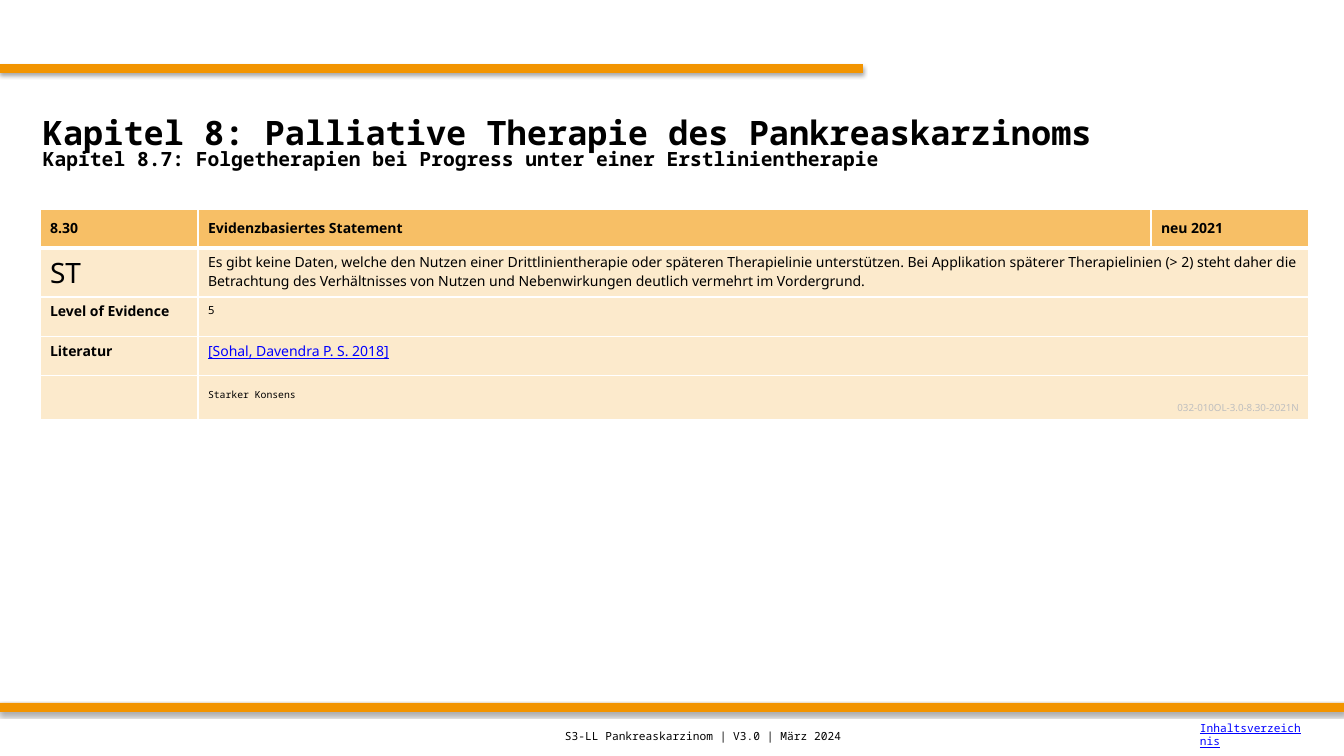
"""Build a guideline slide with a statement table on third-line therapy."""
import lxml.etree
import pptx
import pptx.dml.color
import pptx.enum.shapes
import pptx.enum.text
import pptx.oxml
import pptx.oxml.ns
import pptx.util

SCALE = 914400 / 100.8
SANS = "Noto Sans"
MONO = "Noto Sans Mono"
BLACK = "000000"
BLUE = "0000FF"
ORANGE = "F29400"
ANCHOR = pptx.enum.text.MSO_ANCHOR
ALIGN = pptx.enum.text.PP_ALIGN


def px(size):
    return pptx.util.Emu(round(size * SCALE))


def hue(code):
    return pptx.dml.color.RGBColor.from_string(code)


def tint(shape, code):
    shape.fill.solid()
    shape.fill.fore_color.rgb = hue(code)


def line(text, size, face=SANS, bold=False, color=BLACK, under=False, align=ALIGN.LEFT):
    return dict(text=text, size=size, face=face, bold=bold,
                color=color, under=under, align=align)


def write(frame, lines, space=None):
    for index, item in enumerate(lines):
        para = frame.add_paragraph() if index else frame.paragraphs[0]
        para.alignment = item["align"]
        if space:
            para.line_spacing = space
        run = para.add_run()
        run.text = item["text"]
        run.font.size = pptx.util.Pt(item["size"])
        run.font.name = item["face"]
        run.font.bold = item["bold"]
        run.font.underline = item["under"]
        run.font.color.rgb = hue(item["color"])


def label(slide, box, lines, space=None):
    frame = slide.shapes.add_textbox(*map(px, box)).text_frame
    frame.word_wrap = True
    frame.vertical_anchor = ANCHOR.MIDDLE
    write(frame, lines, space)


def bar(slide, top, width):
    kind = pptx.enum.shapes.MSO_SHAPE.RECTANGLE
    shape = slide.shapes.add_shape(kind, 0, px(top), px(width), px(9))
    tint(shape, ORANGE)
    shape.line.fill.background()
    shape.shadow.inherit = False
    effects = shape._element.spPr.find(pptx.oxml.ns.qn("a:effectLst"))
    effects.append(pptx.oxml.parse_xml(
        f'<a:outerShdw {pptx.oxml.ns.nsdecls("a")} blurRad="39370" dist="22860" '
        'dir="5400000" rotWithShape="0"><a:srgbClr val="000000">'
        '<a:alpha val="35000"/></a:srgbClr></a:outerShdw>'))


def edge(cell, row):
    props = cell._tc.get_or_add_tcPr()
    widths = {"L": 1, "R": 1, "T": 3 if row == 1 else 1, "B": 3 if row == 0 else 1}
    for index, (side, width) in enumerate(widths.items()):
        props.insert(index, pptx.oxml.parse_xml(
            f'<a:ln{side} {pptx.oxml.ns.nsdecls("a")} w="{width * 12700}">'
            f'<a:solidFill><a:srgbClr val="FFFFFF"/></a:solidFill></a:ln{side}>'))


def grid(slide, rows, widths, heights):
    box = (40, 209, sum(widths), sum(heights))
    table = slide.shapes.add_table(len(rows), len(widths), *map(px, box)).table
    for column, width in zip(table.columns, widths):
        column.width = px(width)
    for row, height in zip(table.rows, heights):
        row.height = px(height)
    for r, texts in enumerate(rows):
        if len(texts) < len(widths):
            table.cell(r, 1).merge(table.cell(r, 2))
        for c in range(len(widths)):
            cell = table.cell(r, c)
            tint(cell, "FCEACC" if r else "F7BF66")
            edge(cell, r)
            if r == 0:
                cell.vertical_anchor = ANCHOR.MIDDLE
        for c, lines in enumerate(texts):
            write(table.cell(r, c).text_frame, lines)
    table.cell(len(rows) - 1, 1).vertical_anchor = ANCHOR.BOTTOM


def main():
    deck = pptx.Presentation()
    deck.slide_width, deck.slide_height = px(1344), px(756)
    slide = deck.slides.add_slide(deck.slide_layouts[6])
    bar(slide, 64, 863)
    bar(slide, 703, 1344)
    label(slide, (33, 86, 1277, 118), [
        line("Kapitel 8: Palliative Therapie des Pankreaskarzinoms", 24, MONO, True),
        line("Kapitel 8.7: Folgetherapien bei Progress unter einer Erstlinientherapie",
             14, MONO, True),
    ], 0.8)
    advice = ("Es gibt keine Daten, welche den Nutzen einer Drittlinientherapie oder "
              "späteren Therapielinie unterstützen. Bei Applikation späterer "
              "Therapielinien (> 2) steht daher die Betrachtung des Verhältnisses von "
              "Nutzen und Nebenwirkungen deutlich vermehrt im Vordergrund.")
    heads = ("8.30", "Evidenzbasiertes Statement", "neu 2021")
    rows = [
        [[line(head, 10, bold=True)] for head in heads],
        [[line("ST", 20)], [line(advice, 10)]],
        [[line("Level of Evidence", 10, bold=True)], [line("5", 8)]],
        [[line("Literatur", 10, bold=True)],
         [line("[Sohal, Davendra P. S. 2018]", 10, color=BLUE, under=True)]],
        [[], [line("Starker Konsens", 7, MONO),
              line("032-010OL-3.0-8.30-2021N", 7, color="BFBFBF", align=ALIGN.RIGHT)]],
    ]
    grid(slide, rows, (158, 953, 158), (39, 49, 40, 39, 44))
    label(slide, (555, 717, 555, 39),
          [line("S3-LL Pankreaskarzinom | V3.0 | März 2024", 8, MONO)])
    label(slide, (1190, 715, 123, 39),
          [line("Inhaltsverzeichnis", 8, MONO, color=BLUE, under=True)])
    deck.save("out.pptx")


if __name__ == "__main__":
    main()
